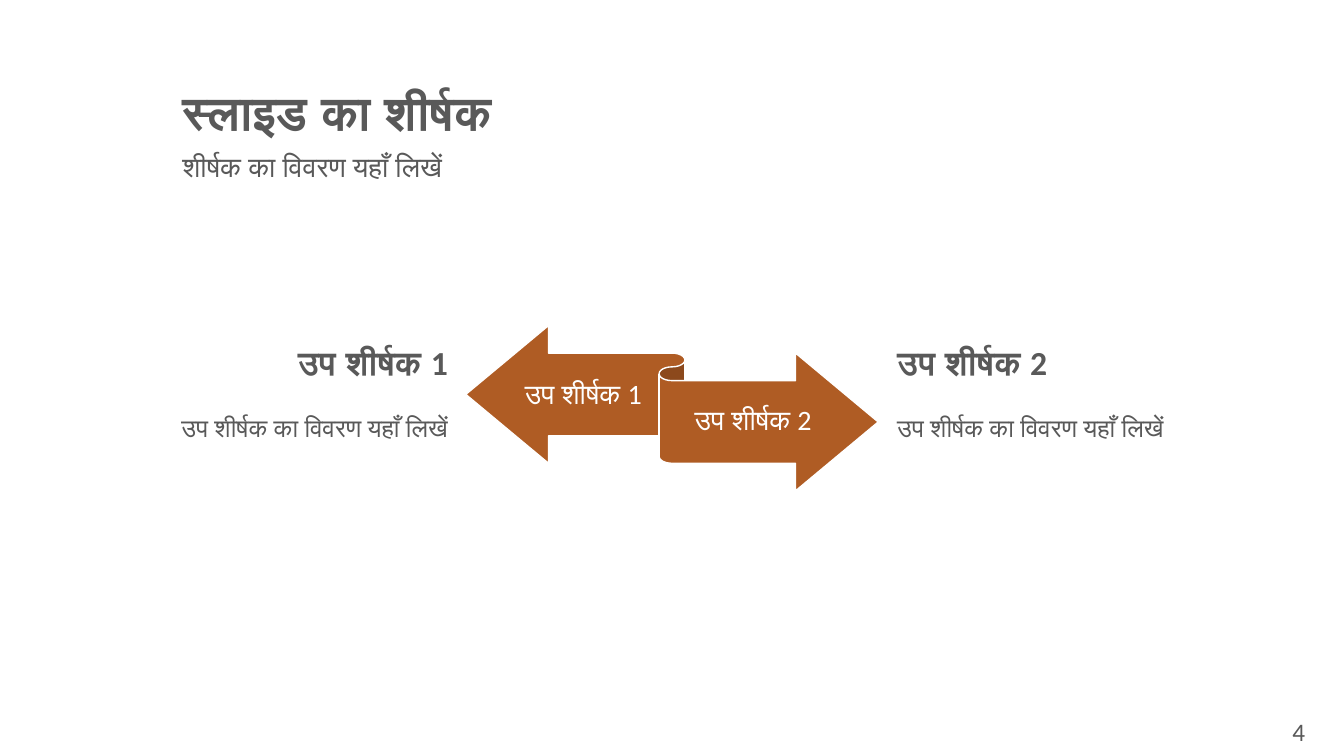
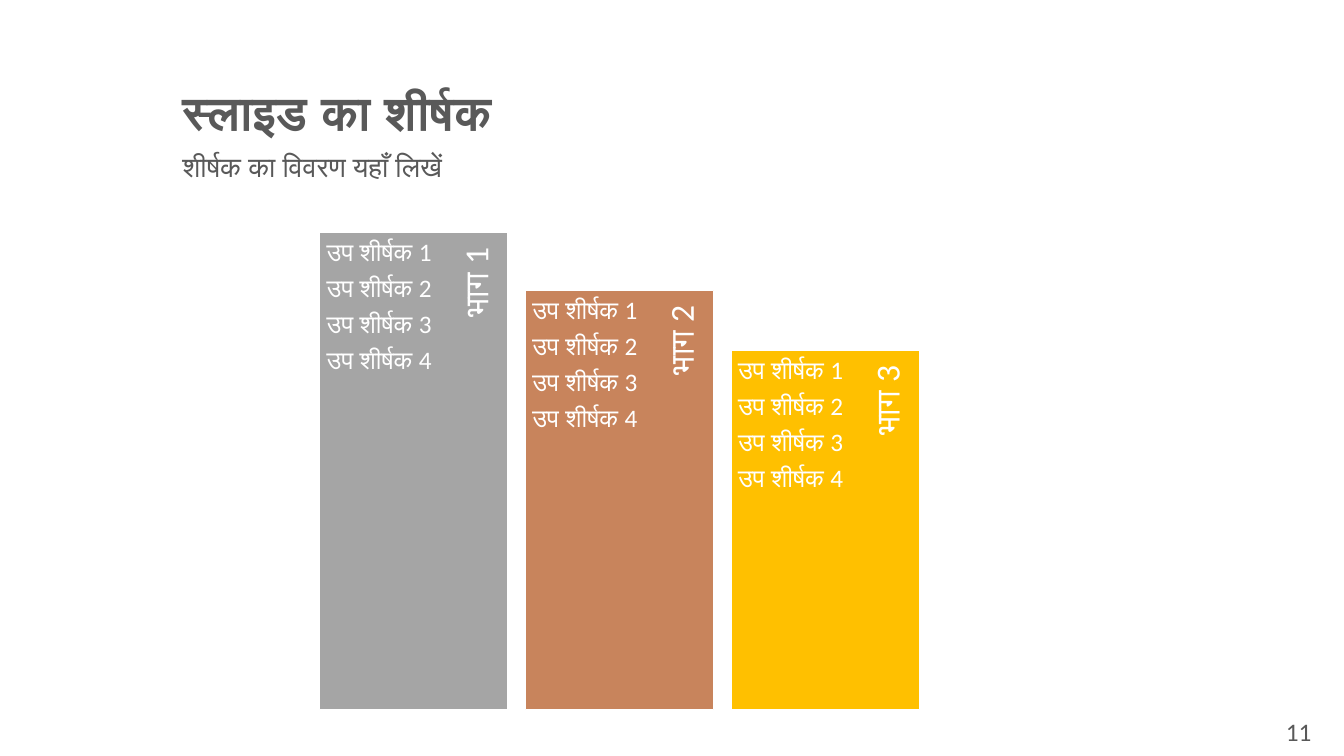
from pptx import Presentation
from pptx.dml.color import RGBColor
from pptx.enum.shapes import MSO_SHAPE
from pptx.enum.text import MSO_ANCHOR, PP_ALIGN
from pptx.util import Inches, Pt

FONT = "Calibri"
GREY, WHITE, RUST = "595959", "FFFFFF", "AF5C24"
PLAIN_INSETS = (0.1, 0.05, 0.1, 0.05)
BAR_BOTTOM = 7.04
BAR_W = 1.87


def color(value):
    return RGBColor.from_string(value)


def add_text(s, box, paragraphs, insets=PLAIN_INSETS, anchor=MSO_ANCHOR.TOP):
    """Add a text box; each paragraph is (text, font formats, paragraph formats)."""
    sp = s.shapes.add_textbox(*map(Inches, box))
    tf = sp.text_frame
    tf.word_wrap = True
    tf.vertical_anchor = anchor
    for side, inset in zip(("left", "top", "right", "bottom"), insets):
        setattr(tf, f"margin_{side}", Inches(inset))
    for i, (text, font, layout) in enumerate(paragraphs):
        p = tf.paragraphs[0] if i == 0 else tf.add_paragraph()
        for name, value in layout.items():
            setattr(p, name, value)
        r = p.add_run()
        r.text = text
        r.font.name = FONT
        for name, value in font.items():
            if name == "color":
                r.font.color.rgb = color(value)
            else:
                setattr(r.font, name, value)
    return sp


def add_block(s, kind, box, fill):
    sp = s.shapes.add_shape(kind, *map(Inches, box))
    sp.shadow.inherit = False
    sp.fill.solid()
    sp.fill.fore_color.rgb = color(fill)
    sp.line.color.rgb = color(WHITE)
    sp.line.width = Pt(1)
    return sp


def style(size, fill=GREY, bold=False):
    return {"size": Pt(size), "color": fill, "bold": bold}


def tight(size, align=PP_ALIGN.LEFT):
    """Paragraph formats of text on shapes: close lines, 35% of the size after."""
    return {"line_spacing": 0.9, "space_after": Pt(size * 0.35), "alignment": align}


def new_slide(prs, number):
    """Add a slide with the shared title, subtitle and page number."""
    s = prs.slides.add_slide(prs.slide_layouts[6])
    heading = {"line_spacing": 0.9}
    add_text(s, (1.71, 0.84, 9.61, 0.55),
             [("स्लाइड का शीर्षक", style(34, bold=True), heading)])
    add_text(s, (1.71, 1.47, 9.61, 0.63),
             [("शीर्षक का विवरण यहाँ लिखें", style(20), heading)])
    add_text(s, (12.42, 7.06, 0.92, 0.44),
             [(str(number), style(18), {"alignment": PP_ALIGN.CENTER})])
    return s


def add_arrow_label(s, box, text):
    add_text(s, box, [(text, style(20, WHITE), tight(20, PP_ALIGN.CENTER))],
             (0, 0.08, 0, 0.08), MSO_ANCHOR.MIDDLE)


def add_description(s, box, heading, align):
    add_text(s, box, [
        (heading, style(24, bold=True), {"alignment": align}),
        ("उप शीर्षक का विवरण यहाँ लिखें", style(18),
         {"alignment": align, "space_before": Pt(22)}),
    ])


def add_bar(s, left, top, fill, label):
    """Add a bar with its list on the left and an upward label on the right."""
    height = BAR_BOTTOM - top
    add_block(s, MSO_SHAPE.RECTANGLE, (left, top, BAR_W, height), fill)
    length, depth = height * 0.9, 0.49
    center_x, center_y = left + 1.58, top + length / 2
    sp = add_text(s, (center_x - length / 2, center_y - depth / 2, length, depth),
                  [(label, style(24, WHITE), tight(24, PP_ALIGN.RIGHT))],
                  (0.1, 0, 0.15, 0.03), MSO_ANCHOR.MIDDLE)
    sp.rotation = 270
    add_text(s, (left, top, 1.33, height),
             [(f"उप शीर्षक {n}", style(18, WHITE), tight(18)) for n in range(1, 5)],
             (0.07,) * 4)


def build_ribbon_slide(prs):
    s = new_slide(prs, 4)
    add_block(s, MSO_SHAPE.LEFT_RIGHT_RIBBON, (4.62, 3.23, 4.09, 1.64), RUST)
    add_arrow_label(s, (5.11, 3.52, 1.35, 0.8), "उप शीर्षक 1")
    add_arrow_label(s, (6.67, 3.78, 1.6, 0.8), "उप शीर्षक 2")
    add_description(s, (1.13, 3.34, 3.41, 1.11), "उप शीर्षक 1", PP_ALIGN.RIGHT)
    add_description(s, (8.8, 3.34, 3.18, 1.41), "उप शीर्षक 2", PP_ALIGN.LEFT)


def build_bars_slide(prs):
    s = new_slide(prs, 11)
    bars = [(2.31, "A5A5A5"), (2.88, "C8845C"), (3.48, "FFC000")]
    for i, (top, fill) in enumerate(bars):
        add_bar(s, 3.17 + i * 2.04, top, fill, f"भाग {i + 1}")


def main():
    prs = Presentation()
    prs.slide_width, prs.slide_height = Inches(13.33), Inches(7.5)
    build_ribbon_slide(prs)
    build_bars_slide(prs)
    prs.save("out.pptx")


if __name__ == "__main__":
    main()
